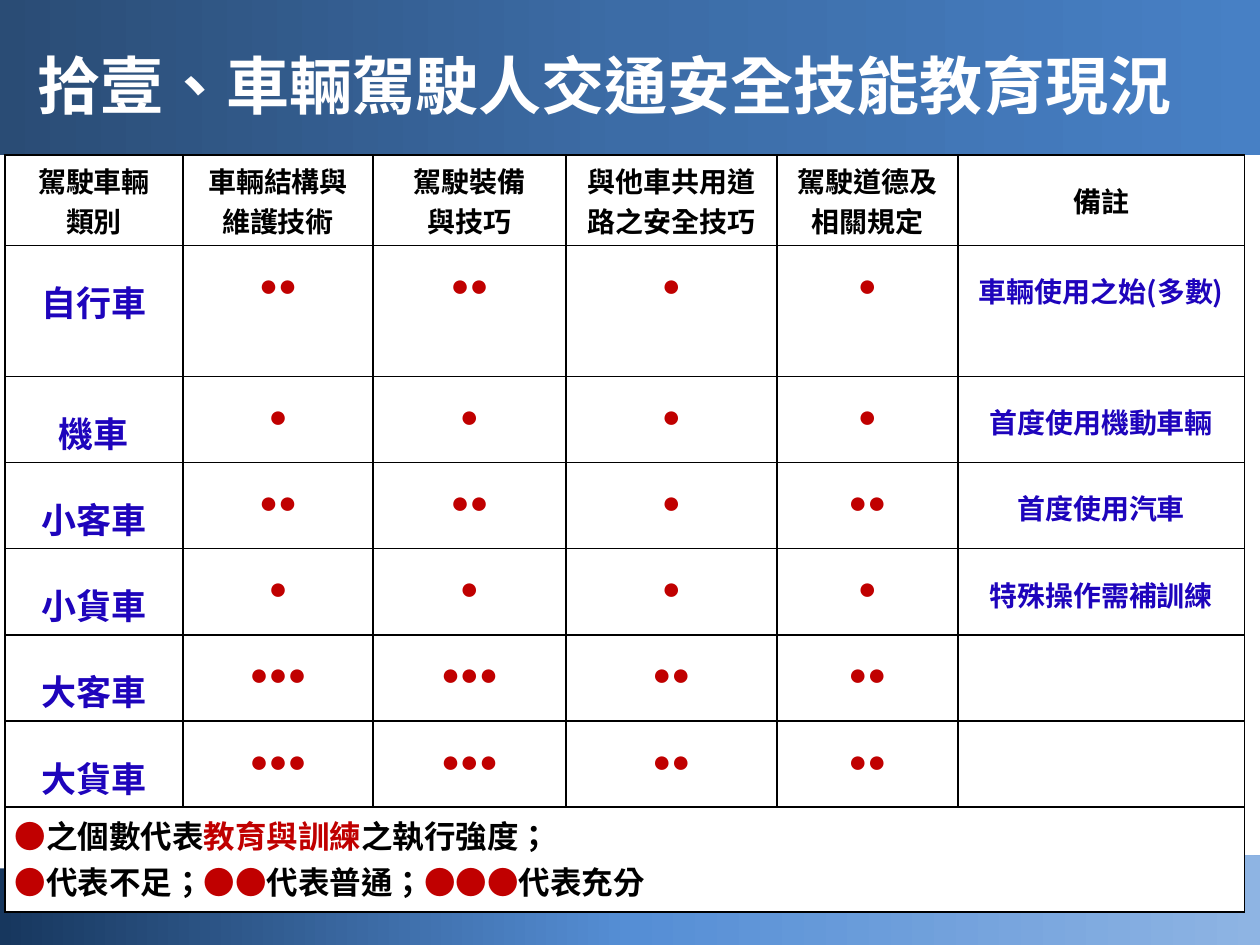
from typing import NamedTuple

from lxml import etree
from pptx import Presentation
from pptx.dml.color import RGBColor
from pptx.enum.lang import MSO_LANGUAGE_ID
from pptx.enum.shapes import MSO_SHAPE
from pptx.enum.text import MSO_ANCHOR, PP_ALIGN
from pptx.oxml.ns import qn
from pptx.util import Cm, Pt

RECTANGLE = MSO_SHAPE.RECTANGLE
WAVE = MSO_SHAPE.FLOWCHART_DOCUMENT
CENTER, LEFT = PP_ALIGN.CENTER, PP_ALIGN.LEFT
MIDDLE = MSO_ANCHOR.MIDDLE
CHINESE = MSO_LANGUAGE_ID.TRADITIONAL_CHINESE

SANS, ARIAL, TIMES = "Noto Sans CJK SC", "Arial", "Times New Roman"
BLACK, WHITE, BLUE, RED = "000000", "FFFFFF", "1E04BC", "C00000"
DOT = "●"


class Style(NamedTuple):
    size: float
    color: str
    font: str = SANS
    bold: bool = True


class Span(NamedTuple):
    text: str
    style: Style


class Band(NamedTuple):
    preset: MSO_SHAPE
    top: float
    height: float
    rotation: int
    colors: tuple[str, str, str]


class Vehicle(NamedTuple):
    name: str
    dots: tuple[int, int, int, int]
    remark: str = ""


TITLE = Style(36, WHITE)
HEADER = Style(16, BLACK)
NAME = Style(20, BLUE)
REMARK = Style(16, BLUE)
RATING = Style(18, RED, ARIAL, False)
LEGEND = Style(18, BLACK)
LEGEND_TIMES = Style(18, BLACK, TIMES)
LEGEND_RED = Style(18, RED, TIMES)

TIGHT = {"alignment": CENTER}
LOOSE = {"alignment": CENTER, "line_spacing": 1.5}
BODY = {**LOOSE, "space_before": Pt(3), "space_after": Pt(3)}

BANDS = [
    Band(WAVE, 17.12, 1.95, 180, ("17375E", "558ED5", "8EB4E3")),
    Band(RECTANGLE, 0, 3.12, 0, ("2A4C75", "3C6CA6", "4780C5")),
]
COLUMN_WIDTHS = [3.59, 3.83, 3.89, 4.25, 3.65, 5.78]
HEADER_HEIGHT, BODY_HEIGHT, LEGEND_HEIGHT = 1.8, 1.65, 2.11
HEADERS = [
    ["駕駛車輛", "類別"],
    ["車輛結構與", "維護技術"],
    ["駕駛裝備", "與技巧"],
    ["與他車共用道路之安全技巧"],
    ["駕駛道德及", "相關規定"],
    ["備註"],
]
VEHICLES = [
    Vehicle("自行車", (2, 2, 1, 1), "車輛使用之始(多數)"),
    Vehicle("機車", (1, 1, 1, 1), "首度使用機動車輛"),
    Vehicle("小客車", (2, 2, 1, 2), "首度使用汽車"),
    Vehicle("小貨車", (1, 1, 1, 1), "特殊操作需補訓練"),
    Vehicle("大客車", (3, 3, 2, 2)),
    Vehicle("大貨車", (3, 3, 2, 2)),
]
LEGEND_LINES = [
    [Span(DOT, RATING), Span("之個數代表", LEGEND_TIMES),
     Span("教育與訓練", LEGEND_RED), Span("之執行強度；", LEGEND_TIMES)],
    [Span(DOT, RATING), Span("代表不足；", LEGEND_TIMES),
     Span(DOT * 2, RATING), Span("代表普通；", LEGEND),
     Span(DOT * 3, RATING), Span("代表充分", LEGEND)],
]


def rgb(value: str) -> RGBColor:
    return RGBColor.from_string(value)


def add_child(parent, tag: str, **attributes: str):
    return etree.SubElement(parent, qn(tag), attributes)


def write(frame, lines: list[list[Span]], layout: dict) -> None:
    for index, spans in enumerate(lines):
        para = frame.add_paragraph() if index else frame.paragraphs[0]
        for name, value in layout.items():
            setattr(para, name, value)
        for span in spans:
            run = para.add_run()
            run.text = span.text
            style = span.style
            run.font.color.rgb = rgb(style.color)
            formats = {"size": Pt(style.size), "name": style.font,
                       "bold": style.bold, "language_id": CHINESE}
            for name, value in formats.items():
                setattr(run.font, name, value)
            # East Asian glyphs always use the sans face
            add_child(run.font._element, "a:ea", typeface=SANS)


def draw_band(page, band: Band) -> None:
    box = page.shapes.add_shape(band.preset, 0, Cm(band.top), Cm(25.4), Cm(band.height))
    box.rotation = band.rotation
    box.shadow.inherit = False
    box.line.fill.background()
    box.fill.gradient()
    gradient = box._element.spPr.find(qn("a:gradFill"))
    for child in list(gradient):
        gradient.remove(child)
    stops = add_child(gradient, "a:gsLst")
    for index, color in enumerate(band.colors):
        stop = add_child(stops, "a:gs", pos=str(index * 50000))
        add_child(stop, "a:srgbClr", val=color)
    add_child(gradient, "a:lin", ang=str(band.rotation * 60000), scaled="0")


def format_cell(cell) -> None:
    properties = cell._tc.get_or_add_tcPr()
    for side in ("a:lnL", "a:lnR", "a:lnT", "a:lnB"):
        line = add_child(properties, side, w=str(Pt(1)))
        add_child(add_child(line, "a:solidFill"), "a:srgbClr", val=BLACK)
    cell.fill.solid()
    cell.fill.fore_color.rgb = rgb(WHITE)
    margins = {"margin_left": 0.2, "margin_right": 0.2,
               "margin_top": 0.1, "margin_bottom": 0.1}
    for name, value in margins.items():
        setattr(cell, name, Cm(value))


def draw_table(page) -> None:
    heights = [HEADER_HEIGHT] + [BODY_HEIGHT] * len(VEHICLES) + [LEGEND_HEIGHT]
    table = page.shapes.add_table(
        len(heights), len(COLUMN_WIDTHS), Cm(0.1), Cm(3.12),
        Cm(sum(COLUMN_WIDTHS)), Cm(sum(heights))).table
    for column, width in zip(table.columns, COLUMN_WIDTHS):
        column.width = Cm(width)
    for row, height in zip(table.rows, heights):
        row.height = Cm(height)
    for cell in table.iter_cells():
        format_cell(cell)

    # Header row
    last = len(HEADERS) - 1
    for index, lines in enumerate(HEADERS):
        layout = LOOSE if index == last else TIGHT
        write(table.cell(0, index).text_frame, [[Span(line, HEADER)] for line in lines], layout)

    # One row per vehicle
    for row, vehicle in enumerate(VEHICLES, start=1):
        spans = [Span(vehicle.name, NAME)]
        spans += [Span(DOT * count, RATING) for count in vehicle.dots]
        if vehicle.remark:
            spans.append(Span(vehicle.remark, REMARK))
        for index, span in enumerate(spans):
            write(table.cell(row, index).text_frame, [[span]], BODY)

    # Legend across the full width
    bottom = len(heights) - 1
    legend = table.cell(bottom, 0)
    legend.merge(table.cell(bottom, last))
    write(legend.text_frame, LEGEND_LINES, {"alignment": LEFT})


def draw_title(page) -> None:
    frame = page.shapes.add_textbox(Cm(0.51), Cm(0.53), Cm(24.61), Cm(2.36)).text_frame
    frame.word_wrap = True
    frame.vertical_anchor = MIDDLE
    write(frame, [[Span("拾壹、車輛駕駛人交通安全技能教育現況", TITLE)]], {"alignment": LEFT})


def main() -> None:
    deck = Presentation()
    deck.slide_width, deck.slide_height = Cm(25.4), Cm(19.05)
    page = deck.slides.add_slide(deck.slide_layouts[6])
    for band in BANDS:
        draw_band(page, band)
    draw_table(page)
    draw_title(page)
    deck.save("out.pptx")


if __name__ == "__main__":
    main()
